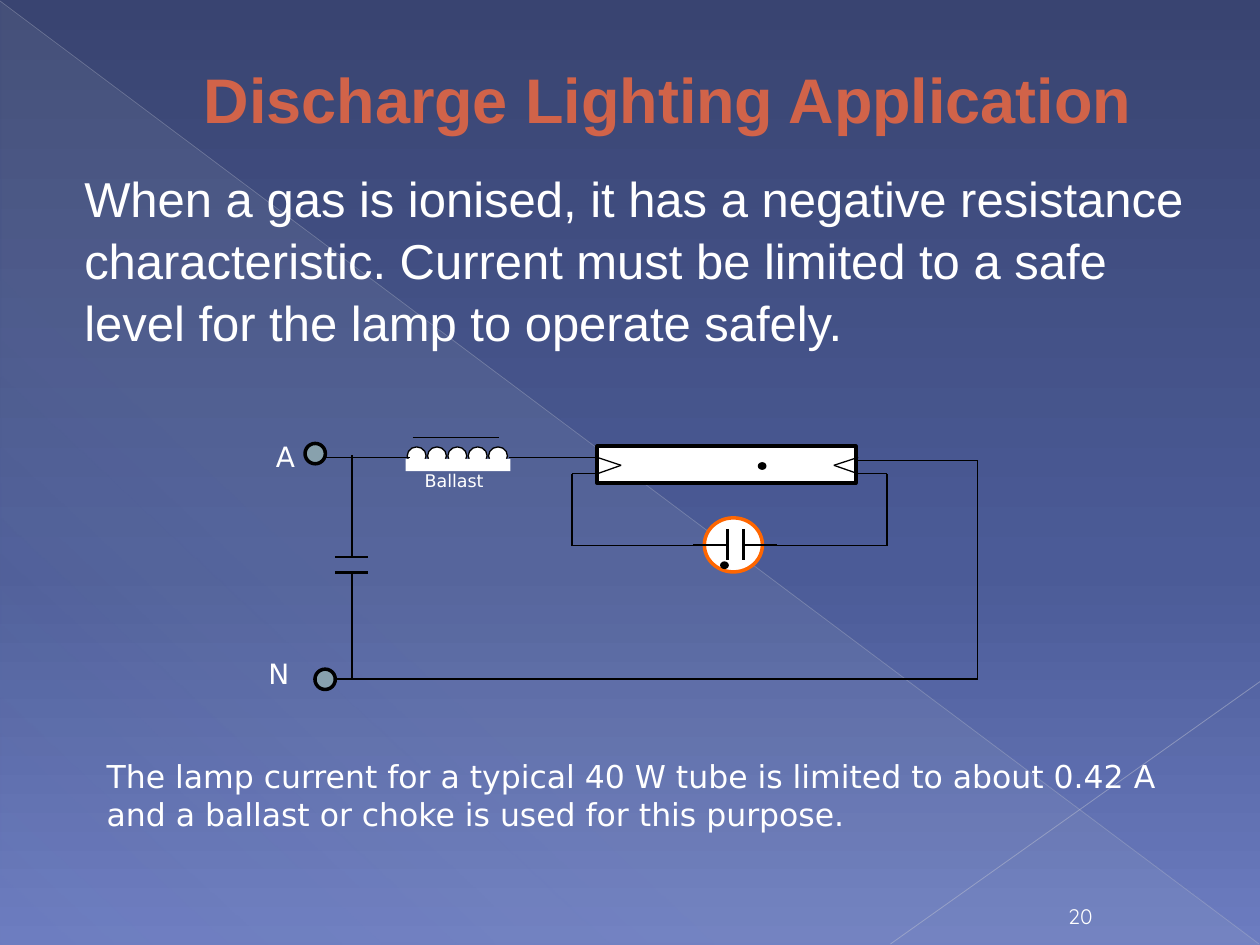
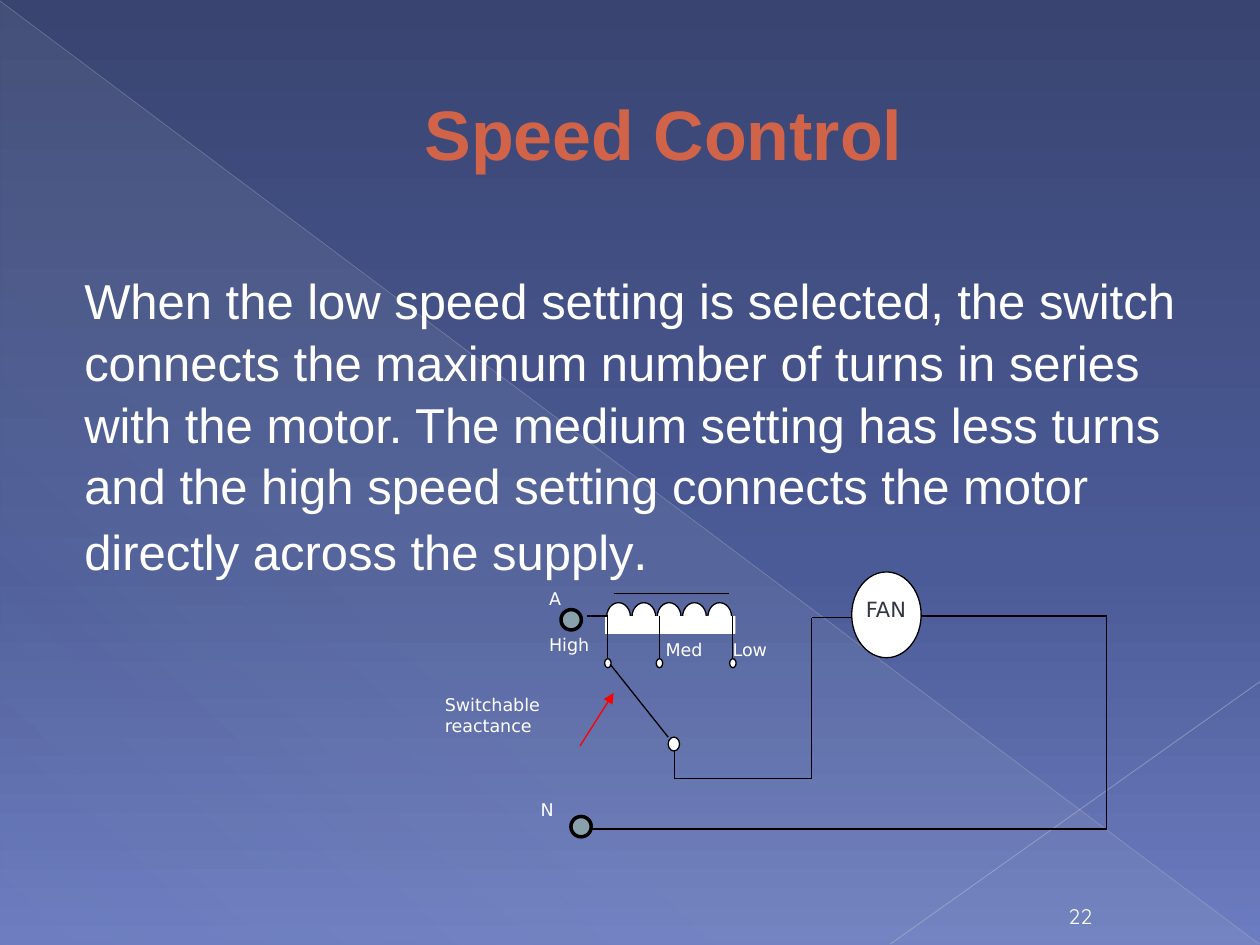
"""Build two circuit slides: discharge lighting and fan speed control."""
from dataclasses import dataclass
from itertools import pairwise

from lxml import etree
from pptx import Presentation
from pptx import util as u
from pptx.dml.color import RGBColor
from pptx.enum import shapes, text
from pptx.oxml import ns


@dataclass(frozen=True)
class Theme:
    """Colours, fonts and type sizes shared by the slides."""

    sky: tuple = ((0, "394471", 100), (60, "4B5B97", 100), (100, "6C7CC0", 100))
    veil: tuple = ((0, "C5D1D7", 10), (70, "C5D1D7", 8), (100, "C5D1D7", 1))
    fall_line: str = "BABECD"
    rise_line: str = "C2C5D2"
    title: str = "D16349"
    title_edge: str = "914533"
    white: str = "FFFFFF"
    ink: str = "000000"
    terminal: str = "88A1AD"
    starter: str = "FF6600"
    arrow: str = "FF0000"
    fan: str = "323643"
    heading_font: str = "Arial"
    label_font: str = "DejaVu Sans"
    number_font: str = "Quicksand"
    body_size: int = 28
    caption_size: int = 18
    terminal_size: int = 16
    number_size: int = 12
    label_size: int = 10


THEME = Theme()
OVAL = shapes.MSO_SHAPE.OVAL
RECTANGLE = shapes.MSO_SHAPE.RECTANGLE
CENTER = text.PP_ALIGN.CENTER
MIDDLE = text.MSO_ANCHOR.MIDDLE


def apply_gradient(fill, element, stops, angle):
    """Fill an element with a linear gradient of (position, colour, opacity) stops."""
    fill.solid()
    solid = element.find(".//" + ns.qn("a:solidFill"))
    gradient = etree.Element(ns.qn("a:gradFill"), rotWithShape="1")
    stop_list = etree.SubElement(gradient, ns.qn("a:gsLst"))
    for position, colour, opacity in stops:
        stop = etree.SubElement(stop_list, ns.qn("a:gs"), pos=str(position * 1000))
        paint = etree.SubElement(stop, ns.qn("a:srgbClr"), val=colour)
        etree.SubElement(paint, ns.qn("a:alpha"), val=str(opacity * 1000))
    etree.SubElement(gradient, ns.qn("a:lin"), ang=str(angle * 60000), scaled="0")
    solid.getparent().replace(solid, gradient)


def style_font(font, name, size, colour, bold=False):
    """Set the face, size, colour and weight of a font."""
    font.name, font.size, font.bold = name, u.Pt(size), bold
    font.color.rgb = RGBColor.from_string(colour)


@dataclass
class Board:
    """A region of a slide whose parts are placed in cm from its corner."""

    slide: object
    left: float = 0
    top: float = 0

    def box(self, left, top, width, height):
        """Return slide lengths for a box given relative to the region."""
        return (u.Cm(self.left + left), u.Cm(self.top + top), u.Cm(width), u.Cm(height))

    def shape(self, kind, box, fill=THEME.white, line=THEME.ink, weight=0.75):
        """Add a flat preset shape."""
        shape = self.slide.shapes.add_shape(kind, *self.box(*box))
        shape.shadow.inherit = False
        shape.fill.solid()
        shape.fill.fore_color.rgb = RGBColor.from_string(fill)
        if line:
            shape.line.color.rgb = RGBColor.from_string(line)
            shape.line.width = u.Pt(weight)
        else:
            shape.line.fill.background()
        return shape

    def wire(self, *points, colour=THEME.ink, weight=0.75):
        """Join the points with straight lines and return the last line."""
        for start, end in pairwise(points):
            ends = [u.Cm(value) for x, y in (start, end)
                    for value in (self.left + x, self.top + y)]
            line = self.slide.shapes.add_connector(shapes.MSO_CONNECTOR.STRAIGHT, *ends)
            line.line.color.rgb = RGBColor.from_string(colour)
            line.line.width = u.Pt(weight)
            etree.SubElement(line.element.spPr, ns.qn("a:effectLst"))
        return line

    def label(self, words, box, size=THEME.label_size, font=THEME.label_font,
              colour=THEME.white, align=None, anchor=text.MSO_ANCHOR.TOP,
              bold=False, indent=0):
        """Add a wrapped one-paragraph text box and return its paragraph."""
        frame = self.slide.shapes.add_textbox(*self.box(*box)).text_frame
        frame.word_wrap, frame.vertical_anchor = True, anchor
        paragraph = frame.paragraphs[0]
        paragraph.add_run().text = words
        paragraph.alignment = align
        if indent:
            paragraph._p.get_or_add_pPr().set("marL", str(u.Cm(indent)))
        style_font(paragraph.font, font, size, colour, bold)
        return paragraph

    def terminal(self, left, top):
        """Add a round supply terminal."""
        self.shape(shapes.MSO_SHAPE.FLOWCHART_CONNECTOR, (left, top, 0.41, 0.41),
                   THEME.terminal, weight=2)

    def dot(self, left, top):
        """Add a small solid gas dot."""
        self.shape(OVAL, (left, top, 0.15, 0.13), THEME.ink)

    def coil(self, left, top, pitch, arc, base_drop, base_height, core_length):
        """Add a five-turn coil with its core line above it."""
        for turn in range(5):
            self.shape(OVAL, (left + 0.03 + turn * pitch, top + 0.19, *arc))
        self.shape(RECTANGLE, (left, top + base_drop, pitch * 5.15, base_height), line=None)
        core = left + pitch / 3
        self.wire((core, top), (core + core_length, top))


def draw_backdrop(slide):
    """Add the pale triangle and the two crossing hairlines."""
    board = Board(slide)
    triangle = board.shape(shapes.MSO_SHAPE.RIGHT_TRIANGLE, (0.02, 0.04, 25.38, 19), line=None)
    apply_gradient(triangle.fill, triangle.element.spPr, THEME.veil, 133)
    hairlines = (((0, 0.02), (25.38, 19.03), THEME.fall_line, 0.39, 35),
                 ((25.4, 13.74), (17.95, 19.03), THEME.rise_line, 0.47, 45))
    for start, end, colour, weight, opacity in hairlines:
        line = board.wire(start, end, colour=colour, weight=weight)
        paint = line.element.spPr.find(".//" + ns.qn("a:srgbClr"))
        etree.SubElement(paint, ns.qn("a:alpha"), val=str(opacity * 1000))


def draw_title(slide, words, box, size):
    """Add the bold outlined title."""
    paragraph = Board(slide).label(words, box, size, THEME.heading_font, THEME.title,
                                   CENTER, MIDDLE, bold=True, indent=1.35)
    properties = paragraph.runs[0]._r.get_or_add_rPr()
    outline = etree.SubElement(properties, ns.qn("a:ln"), w=str(u.Pt(0.5)))
    fill = etree.SubElement(outline, ns.qn("a:solidFill"))
    etree.SubElement(fill, ns.qn("a:srgbClr"), val=THEME.title_edge)


def draw_body(slide, words, top, height):
    """Add the main statement and return its paragraph."""
    paragraph = Board(slide).label(words, (1.27, top, 22.88, height), THEME.body_size,
                                   THEME.heading_font, indent=0.18)
    paragraph.line_spacing = 1.05
    return paragraph


def start_slide(presentation, number):
    """Add a blank slide with the backdrop and page number."""
    slide = presentation.slides.add_slide(presentation.slide_layouts[6])
    draw_backdrop(slide)
    Board(slide).label(str(number), (21.08, 18.01, 1.4, 0.84), THEME.number_size,
                       THEME.number_font, align=CENTER, anchor=text.MSO_ANCHOR.BOTTOM)
    return slide


def draw_lamp_circuit(board):
    """Draw the fluorescent tube with its ballast, starter and capacitor."""
    board.coil(3.1, 0.18, 0.41, (0.38, 0.36), 0.43, 0.25, 1.75)
    board.wire((5.18, 0.58), (6.96, 0.58))
    board.wire((1.4, 0.58), (3.18, 0.58))

    board.shape(RECTANGLE, (6.96, 0.36, 5.21, 0.74), weight=2.25)
    for end, tip in ((6.96, 7.44), (12.22, 11.73)):
        board.wire((end, 0.58), (tip, 0.74), (end, 0.91))
    board.dot(10.21, 0.69)
    board.wire((12.17, 0.64), (14.63, 0.64), (14.63, 5.05), (1.45, 5.05))

    for tube, corner, starter in ((6.96, 6.45, 9.12), (12.17, 12.8, 10.21)):
        board.wire((tube, 0.91), (corner, 0.91), (corner, 2.36), (starter, 2.36))
    board.shape(OVAL, (9.12, 1.8, 1.17, 1.09), line=THEME.starter, weight=2)
    board.dot(9.45, 2.69)
    for lead, plate in ((8.89, 9.58), (10.59, 9.91)):
        board.wire((lead, 2.34), (plate, 2.34), weight=1)
        board.wire((plate, 2.03), (plate, 2.64), weight=1.5)

    for lead, plate in ((5.03, 2.9), (0.53, 2.59)):
        board.wire((2.01, lead), (2.01, plate), weight=1)
        board.wire((1.68, plate), (2.34, plate), weight=1.5)

    board.label("Ballast", (2.87, 0.71, 2.41, 0.76), align=CENTER)
    board.label("A", (0.23, 0.1, 1.27, 0.86), THEME.terminal_size)
    board.label("N", (0.08, 4.47, 1.27, 0.86), THEME.terminal_size)
    board.terminal(1.07, 0.3)
    board.terminal(1.27, 4.85)


def draw_fan_circuit(board):
    """Draw the tapped reactance, its selector switch and the fan."""
    board.coil(3.56, 0.53, 0.51, (0.48, 0.58), 0.46, 0.36, 2.32)
    board.wire((3.61, 0.99), (3.2, 0.99))
    for tap in (3.61, 4.65, 6.13):
        board.wire((tap, 0.99), (tap, 1.85))
        board.shape(OVAL, (tap - 0.06, 1.85, 0.13, 0.18))

    board.shape(OVAL, (4.83, 3.43, 0.23, 0.28))
    board.wire((4.83, 3.43), (3.66, 1.96))
    board.wire((4.95, 3.68), (4.95, 4.27), (7.72, 4.27), (7.72, 1.02), (8.71, 1.02))
    board.wire((9.68, 0.99), (13.67, 0.99), (13.67, 5.28), (3.2, 5.28))
    board.shape(OVAL, (8.53, 0.1, 1.4, 1.73))
    board.label("FAN", (8.23, 0.48, 1.98, 0.76), THEME.number_size,
                colour=THEME.fan, align=CENTER)

    pointer = board.wire((3.05, 3.61), (3.73, 2.54), colour=THEME.arrow)
    stroke = pointer.element.spPr.find(ns.qn("a:ln"))
    etree.SubElement(stroke, ns.qn("a:tailEnd"), type="triangle")
    for words, left, top, width in (("A", 2.18, 0.3, 1.27), ("N", 2.01, 4.55, 1.27),
                                    ("Switchable reactance", 0.08, 2.44, 2.72),
                                    ("High", 2.18, 1.22, 1.63), ("Med", 4.53, 1.32, 1.63),
                                    ("Low", 5.88, 1.32, 1.63)):
        board.label(words, (left, top, width, 1.17))
    board.terminal(2.87, 5.03)
    board.terminal(2.67, 0.86)


def build_lighting_slide(presentation):
    """Build the discharge lighting slide."""
    slide = start_slide(presentation, 20)
    draw_title(slide, "Discharge Lighting Application", (0.79, 0.99, 24, 2), 36)
    draw_body(slide, "When a gas is ionised, it has a negative resistance characteristic. "
              "Current must be limited to a safe level for the lamp to operate safely.",
              3.22, 14.88)
    draw_lamp_circuit(Board(slide, 5.08, 8.64))
    Board(slide).label("The lamp current for a typical 40 W tube is limited to about 0.42 A "
                       "and a ballast or choke is used for this purpose.",
                       (1.9, 15.14, 22.61, 1.78), THEME.caption_size, anchor=MIDDLE)


def build_speed_slide(presentation):
    """Build the fan speed control slide."""
    slide = start_slide(presentation, 22)
    draw_title(slide, "Speed Control", (1.27, 1.4, 22.86, 2.54), 40)
    paragraph = draw_body(
        slide, "When the low speed setting is selected, the switch connects the maximum "
        "number of turns in series with the motor. The medium setting has less turns and "
        "the high speed setting connects the motor directly across the supply", 5.27, 12.7)
    stop = paragraph.add_run()
    stop.text = "."
    stop.font.size = u.Pt(30)
    draw_fan_circuit(Board(slide, 8.64, 11.43))


def main():
    """Build and save the presentation."""
    presentation = Presentation()
    presentation.slide_width, presentation.slide_height = u.Cm(25.4), u.Cm(19.05)
    master = presentation.slide_master
    apply_gradient(master.background.fill, master.element, THEME.sky, 90)
    build_lighting_slide(presentation)
    build_speed_slide(presentation)
    presentation.save("out.pptx")


if __name__ == "__main__":
    main()
